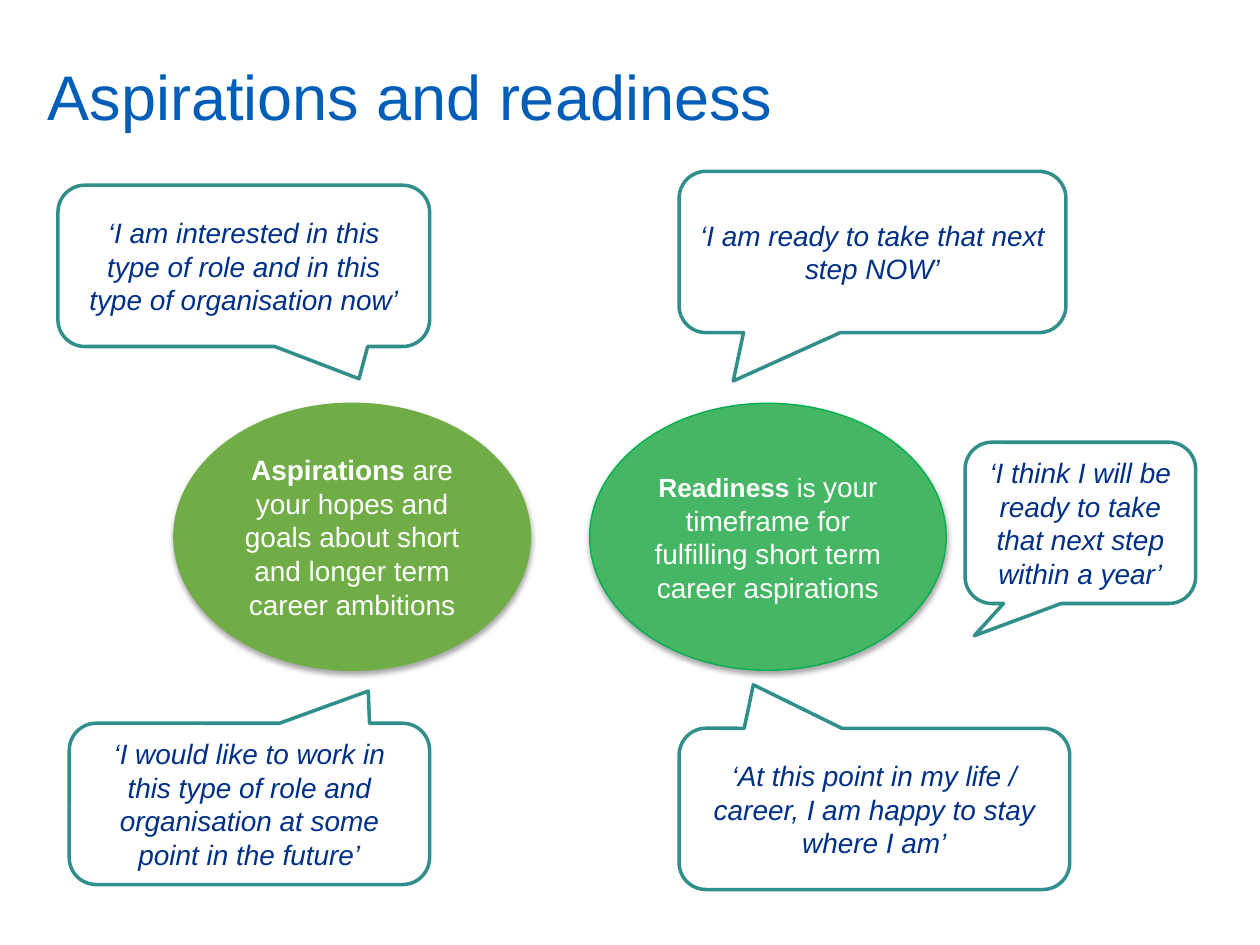
from dataclasses import dataclass

from lxml.etree import SubElement
from pptx import Presentation
from pptx.dml.color import RGBColor
from pptx.enum.shapes import MSO_SHAPE as Preset
from pptx.enum.text import MSO_ANCHOR as Anchor, PP_ALIGN as Align
from pptx.oxml.ns import qn
from pptx.util import Inches, Pt

# The slide is a grid of 100 columns by 75 rows
COLUMNS, ROWS = 100, 75
SLIDE_WIDTH, SLIDE_HEIGHT = Inches(10), Inches(7.5)

WHITE, NAVY, BLUE, TEAL = "FFFFFF", "003087", "005EB8", "318F8B"
OLIVE, GREEN, GREEN_EDGE = "70AD47", "45B664", "00B050"

CALLOUT_HEIGHT = 12.8
ELLIPSE_TOP, ELLIPSE_WIDTH, ELLIPSE_HEIGHT = 32, 28.3, 21.2


@dataclass(frozen=True)
class TextRun:
    text: str
    size: float = 16
    color: str = WHITE
    bold: bool = False
    italic: bool = False


@dataclass(frozen=True)
class Callout:
    quote: str
    column: float
    row: float
    columns: float
    tail_x: float  # tail tip from the centre, as a share of the width
    tail_y: float  # tail tip from the centre, as a share of the height


@dataclass(frozen=True)
class Definition:
    column: float
    fill: str
    edge: str
    runs: tuple[TextRun, ...]


CALLOUTS = (
    Callout("‘I am interested in this type of role and in this type of organisation now’",
            4.6, 14.7, 29.5, 0.31, 0.7),
    Callout("‘I would like to work in this type of role and organisation at some point "
            "in the future’", 5.5, 57.4, 28.6, 0.33, -0.7),
    Callout("‘I am ready to take that next step NOW’", 53.9, 13.6, 30.7, -0.36, 0.8),
    Callout("‘I think I will be ready to take that next step within a year’",
            76.6, 35.1, 18.3, -0.46, 0.7),
    Callout("‘At this point in my life / career, I am happy to stay where I am’",
            53.9, 57.8, 31, -0.31, -0.77),
)

DEFINITIONS = (
    Definition(13.8, OLIVE, OLIVE, (
        TextRun("Aspirations ", bold=True),
        TextRun("are your hopes and goals about short and longer term career ambitions"),
    )),
    Definition(46.8, GREEN, GREEN_EDGE, (
        TextRun("Readiness ", size=15, bold=True),
        TextRun("is ", size=15),
        TextRun("your timeframe for fulfilling short term career aspirations"),
    )),
)


def rgb(color: str) -> RGBColor:
    return RGBColor.from_string(color)


def grid_box(column: float, row: float, columns: float, rows: float) -> tuple[int, ...]:
    """Turn grid cells into left, top, width and height."""
    across, down = SLIDE_WIDTH / COLUMNS, SLIDE_HEIGHT / ROWS
    return (round(column * across), round(row * down),
            round(columns * across), round(rows * down))


def write_text(shape, runs: tuple[TextRun, ...], align: Align) -> None:
    frame = shape.text_frame
    frame.word_wrap = True
    frame.vertical_anchor = Anchor.MIDDLE
    paragraph = frame.paragraphs[0]
    paragraph.alignment = align
    for item in runs:
        run = paragraph.add_run()
        run.text = item.text
        font = run.font
        font.name, font.size = "Arial", Pt(item.size)
        font.bold, font.italic = item.bold, item.italic
        font.color.rgb = rgb(item.color)


def add_filled_shape(slide, preset: Preset, box: tuple[int, ...], fill: str,
                     edge: str, edge_width: float):
    shape = slide.shapes.add_shape(preset, *box)
    shape.shadow.inherit = False
    shape.fill.solid()
    shape.fill.fore_color.rgb = rgb(fill)
    shape.line.color.rgb = rgb(edge)
    shape.line.width = Pt(edge_width)
    return shape


def add_soft_shadow(shape) -> None:
    """Put a blurred shadow straight below the shape."""
    effects = shape._element.spPr.find(qn("a:effectLst"))
    shadow = SubElement(effects, qn("a:outerShdw"), blurRad=str(Pt(3.1)),
                        dist=str(Pt(1.8)), dir="5400000", rotWithShape="0")
    color = SubElement(shadow, qn("a:srgbClr"), val="000000")
    SubElement(color, qn("a:alpha"), val="35000")


def add_callout(slide, callout: Callout) -> None:
    box = grid_box(callout.column, callout.row, callout.columns, CALLOUT_HEIGHT)
    shape = add_filled_shape(slide, Preset.ROUNDED_RECTANGULAR_CALLOUT, box, WHITE, TEAL, 2)
    shape.adjustments[0] = callout.tail_x
    shape.adjustments[1] = callout.tail_y
    write_text(shape, (TextRun(callout.quote, color=NAVY, italic=True),), Align.CENTER)


def add_definition(slide, definition: Definition) -> None:
    box = grid_box(definition.column, ELLIPSE_TOP, ELLIPSE_WIDTH, ELLIPSE_HEIGHT)
    shape = add_filled_shape(slide, Preset.OVAL, box, definition.fill, definition.edge, 0.75)
    add_soft_shadow(shape)
    write_text(shape, definition.runs, Align.CENTER)


def main() -> None:
    presentation = Presentation()
    presentation.slide_width, presentation.slide_height = SLIDE_WIDTH, SLIDE_HEIGHT
    slide = presentation.slides.add_slide(presentation.slide_layouts[6])

    # Title
    title = slide.shapes.add_textbox(*grid_box(2.8, 2.9, 90.7, 9.4))
    write_text(title, (TextRun("Aspirations and readiness", size=36, color=BLUE),), Align.LEFT)

    # The two definitions in the middle
    for definition in DEFINITIONS:
        add_definition(slide, definition)

    # Quotes around them
    for callout in CALLOUTS:
        add_callout(slide, callout)

    presentation.save("out.pptx")


if __name__ == "__main__":
    main()
